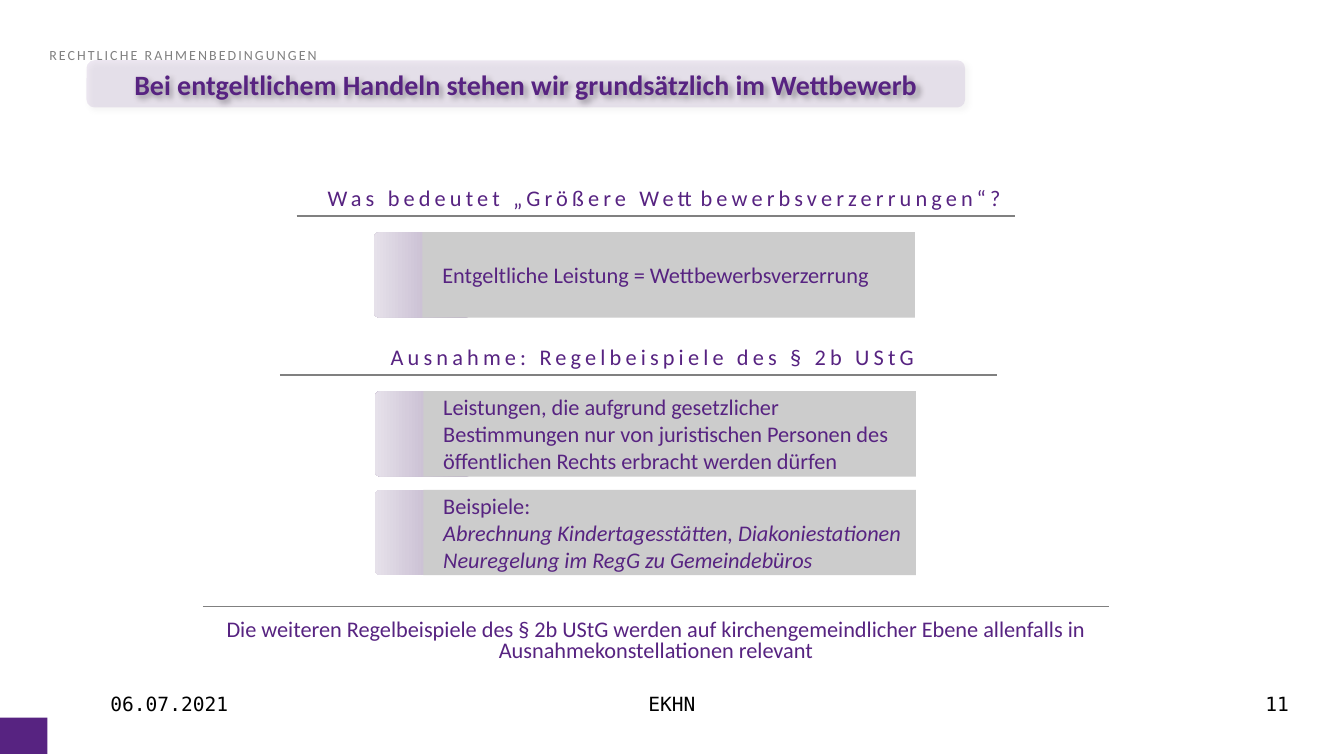
"""Build the slide on competition and the exceptions of § 2b UStG."""
from dataclasses import dataclass

from lxml import etree
from pptx import Presentation
from pptx.dml.color import RGBColor
from pptx.enum.shapes import MSO_CONNECTOR, MSO_SHAPE
from pptx.enum.text import MSO_ANCHOR, MSO_AUTO_SIZE, PP_ALIGN
from pptx.oxml import parse_xml
from pptx.oxml.ns import qn
from pptx.util import Pt

RECT, ROUNDED = MSO_SHAPE.RECTANGLE, MSO_SHAPE.ROUNDED_RECTANGLE
STRAIGHT = MSO_CONNECTOR.STRAIGHT
LEFT, CENTER, RIGHT = PP_ALIGN.LEFT, PP_ALIGN.CENTER, PP_ALIGN.RIGHT
TOP, MIDDLE = MSO_ANCHOR.TOP, MSO_ANCHOR.MIDDLE
NO_AUTOFIT = MSO_AUTO_SIZE.NONE

COLORS = {"purple": "572381", "gray": "808080", "panel": "CCCCCC", "black": "000000",
          "deep": "AD99BD", "mid": "CCC2D5", "pale": "E6E1EA"}
NS = 'xmlns:a="http://schemas.openxmlformats.org/drawingml/2006/main"'
CARD_HEIGHT = 61.2
HEADING_HEIGHT = 26.6


@dataclass(frozen=True)
class Style:
    size: float = 16
    color: str = "purple"
    font: str = "Calibri"
    align: PP_ALIGN = LEFT
    bold: bool = False
    tracking: float = 0


@dataclass(frozen=True)
class Heading:
    text: str
    left: float
    rule_top: float
    rule_width: float


@dataclass(frozen=True)
class Card:
    left: float
    top: float
    text: str


@dataclass(frozen=True)
class FooterItem:
    text: str
    left: float
    width: float
    align: PP_ALIGN


HEADINGS = [
    Heading("Was bedeutet „Größere Wettbewerbsverzerrungen“? ", 212.4, 154.8, 514.8),
    Heading("Ausnahme: Regelbeispiele des § 2b UStG", 200.5, 268.6, 513.6),
]
CARDS = [
    Card(268, 166.3, "Entgeltliche Leistung = Wettbewerbsverzerrung"),
    Card(268.6, 280.1, "Leistungen, die aufgrund gesetzlicher Bestimmungen nur von "
         "juristischen Personen des öffentlichen Rechts erbracht werden dürfen"),
    Card(268.6, 350.8, "Beispiele:\nAbrechnung Kindertagesstätten, Diakoniestationen\n"
         "Neuregelung im RegG zu Gemeindebüros"),
]
FOOTER = [
    FooterItem("06.07.2021", 72, 200.9, LEFT),
    FooterItem("EKHN", 329, 304.6, CENTER),
    FooterItem("11", 689.8, 240.5, RIGHT),
]
CONCLUSION = ("Die weiteren Regelbeispiele des § 2b UStG werden auf kirchengemeindlicher "
              "Ebene allenfalls in Ausnahmekonstellationen relevant")


def rgb(name: str) -> RGBColor:
    """Return a palette colour."""
    return RGBColor.from_string(COLORS[name])


def write(tf, text: str, style: Style, anchor: MSO_ANCHOR = TOP) -> None:
    """Set the text of a frame and format its runs."""
    tf.text = text
    tf.word_wrap = True
    tf.auto_size = NO_AUTOFIT
    tf.vertical_anchor = anchor
    for p in tf.paragraphs:
        p.alignment = style.align
        for r in p.runs:
            r.font.name, r.font.size = style.font, Pt(style.size)
            r.font.bold = style.bold
            r.font.color.rgb = rgb(style.color)
            if style.tracking:
                r._r.get_or_add_rPr().set("spc", str(round(style.tracking * 100)))


def add_text(s, text: str, left: float, top: float, width: float, height: float,
             style: Style):
    """Add a text box and return its frame."""
    tf = s.shapes.add_textbox(Pt(left), Pt(top), Pt(width), Pt(height)).text_frame
    write(tf, text, style)
    return tf


def add_block(s, kind: MSO_SHAPE, left: float, top: float, width: float, height: float,
              color: str):
    """Add a filled shape without outline or shadow."""
    sp = s.shapes.add_shape(kind, Pt(left), Pt(top), Pt(width), Pt(height))
    sp.shadow.inherit = False
    sp.fill.solid()
    sp.fill.fore_color.rgb = rgb(color)
    sp.line.fill.background()
    return sp


def add_rule(s, left: float, top: float, width: float) -> None:
    """Add a thin horizontal line."""
    line = s.shapes.add_connector(STRAIGHT, Pt(left), Pt(top), Pt(left + width), Pt(top))
    line.line.color.rgb = rgb("gray")
    line.line.width = Pt(1)
    etree.SubElement(line._element.spPr, qn("a:effectLst"))


def add_heading(s, heading: Heading) -> None:
    """Add a spaced heading above its rule."""
    add_text(s, heading.text, heading.left, heading.rule_top - HEADING_HEIGHT, 534.2,
             HEADING_HEIGHT, Style(align=CENTER, tracking=3))
    add_rule(s, heading.left, heading.rule_top, heading.rule_width)


def add_card(s, card: Card) -> None:
    """Add a gray panel with a gradient tab on its left."""
    tab = add_block(s, ROUNDED, card.left, card.top, 69.8, CARD_HEIGHT, "mid")
    tab.adjustments[0] = 0.064
    stops = "".join(f'<a:gs pos="{pos}000"><a:srgbClr val="{COLORS[name]}"/></a:gs>'
                    for pos, name in ((0, "deep"), (50, "mid"), (100, "pale")))
    spPr = tab._element.spPr
    spPr.replace(spPr.find(qn("a:solidFill")), parse_xml(
        f'<a:gradFill {NS} rotWithShape="1"><a:gsLst>{stops}</a:gsLst>'
        '<a:lin ang="10800000" scaled="0"/></a:gradFill>'))
    panel = add_block(s, RECT, card.left + 34.6, card.top, 352.8, CARD_HEIGHT, "panel")
    tf = panel.text_frame
    write(tf, card.text, Style(), MIDDLE)
    for i, p in enumerate(tf.paragraphs):
        pPr = p._p.get_or_add_pPr()
        pPr.set("marL", str(Pt(7.2)))
        pPr.set("indent", "0")
        p.runs[0].font.italic = i > 0


def add_banner(s, text: str) -> None:
    """Add the translucent rounded banner with its shadow."""
    sp = add_block(s, ROUNDED, 62, 43.2, 629.3, 33.8, "purple")
    spPr = sp._element.spPr
    color = spPr.find(qn("a:solidFill")).find(qn("a:srgbClr"))
    etree.SubElement(color, qn("a:alpha")).set("val", "10000")
    spPr.find(qn("a:effectLst")).append(parse_xml(
        f'<a:outerShdw {NS} blurRad="{Pt(4)}" dist="{Pt(3)}" dir="2700000" algn="tl" '
        f'rotWithShape="0"><a:srgbClr val="{COLORS["black"]}"><a:alpha val="40000"/>'
        '</a:srgbClr></a:outerShdw>'))
    write(sp.text_frame, text, Style(size=20, align=CENTER, bold=True), MIDDLE)


def set_title(s, text: str) -> None:
    """Place and format the title placeholder."""
    sp = s.shapes.title
    sp.left, sp.top, sp.width, sp.height = Pt(35.3), Pt(35.3), Pt(892.8), Pt(61.2)
    tf = sp.text_frame
    tf.margin_left = tf.margin_top = tf.margin_right = tf.margin_bottom = 0
    write(tf, text, Style(size=10, color="gray", tracking=1.5))
    p = tf.paragraphs[0]
    p.line_spacing, p.space_after = 0.85, Pt(6)


def main() -> None:
    """Build and save the presentation."""
    prs = Presentation()
    prs.slide_width, prs.slide_height = Pt(962.64), Pt(540)
    s = prs.slides.add_slide(prs.slide_layouts[5])
    set_title(s, "RECHTLICHE RAHMENBEDINGUNGEN")
    add_block(s, RECT, 0, 514, 34, 26, "purple")
    for heading in HEADINGS:
        add_heading(s, heading)
    for card in CARDS:
        add_card(s, card)
    p = add_text(s, CONCLUSION, 103, 441.4, 733.7, 38.2, Style(align=CENTER)).paragraphs[0]
    p.line_spacing, p.space_after = Pt(15), Pt(10)
    add_rule(s, 145.4, 434.2, 648.8)
    for item in FOOTER:
        add_text(s, item.text, item.left, 491.8, item.width, 36,
                 Style(14, "black", "DejaVu Sans Mono", item.align))
    add_banner(s, "Bei entgeltlichem Handeln stehen wir grundsätzlich im Wettbewerb")
    prs.save("out.pptx")


if __name__ == "__main__":
    main()
